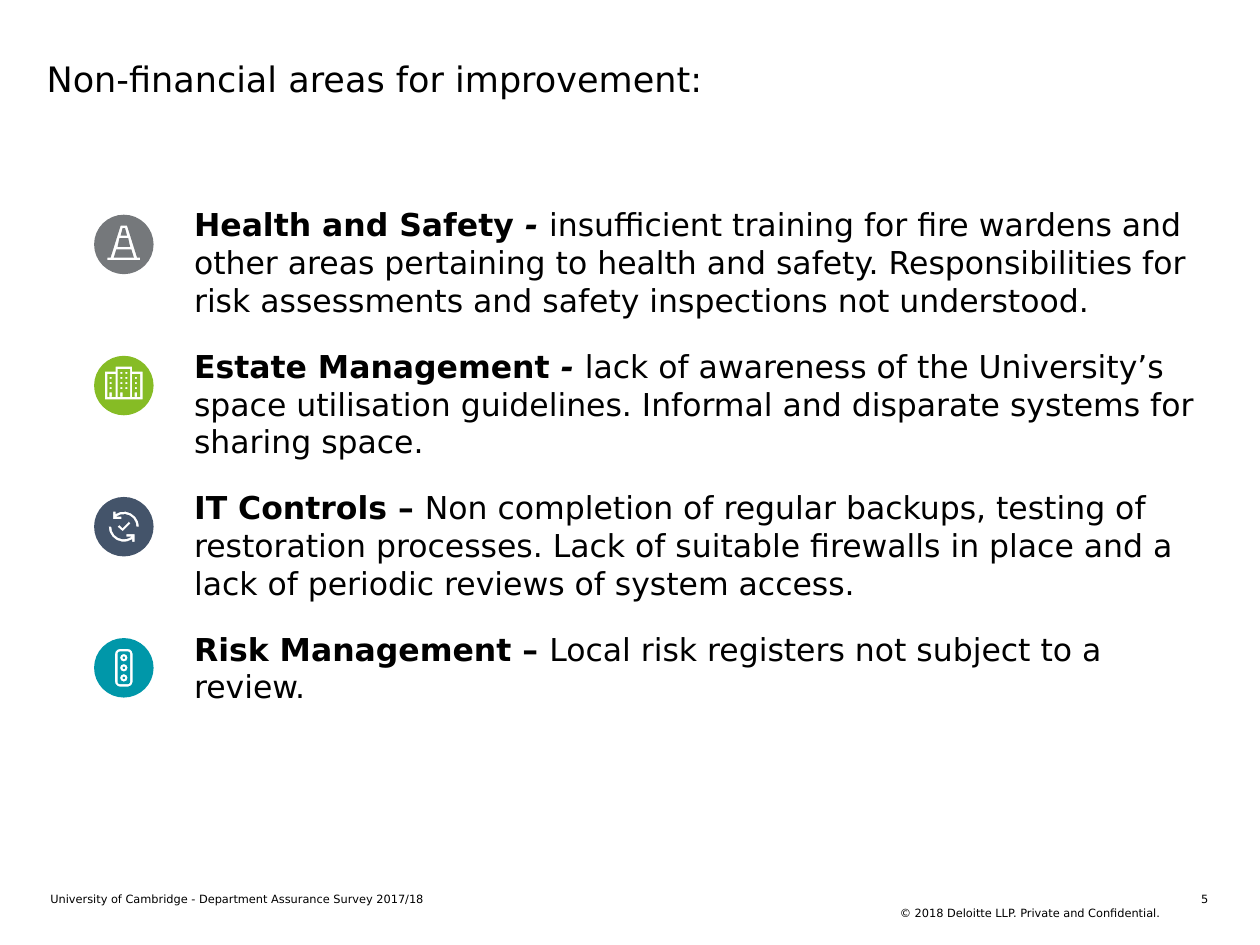
from math import cos, radians, sin

from pptx import Presentation
from pptx.dml.color import RGBColor as Color
from pptx.enum.text import MSO_ANCHOR as Anchor, PP_ALIGN as Align
from pptx.util import Inches, Pt

COLS, ROWS = 100, 75
CELL = Inches(10) // COLS
DOT = CELL // 10
FACE = "DejaVu Sans"
BLACK = Color(0x00, 0x00, 0x00)
GREY = Color(0x75, 0x78, 0x7B)
GREEN = Color(0x86, 0xBC, 0x25)
NAVY = Color(0x44, 0x54, 0x6A)
TEAL = Color(0x00, 0x97, 0xA9)

TOPICS = [
    ("Health and Safety ", "- ", "insufficient training for fire wardens and other areas pertaining to "
     "health and safety. Responsibilities for risk assessments and safety inspections not understood."),
    ("Estate Management ", "- ", "lack of awareness of the University’s space utilisation guidelines. "
     "Informal and disparate systems for sharing space."),
    ("IT Controls – ", "", "Non completion of regular backups, testing of restoration processes. "
     "Lack of suitable firewalls in place and a lack of periodic reviews of system access."),
    ("Risk Management – ", "", "Local risk registers not subject to a review."),
]


def arc(x, y, size, start, end, steps=6):
    turns = [radians(start + (end - start) * i / steps) for i in range(steps + 1)]
    return [(x + size * cos(t), y + size * sin(t)) for t in turns]


def ring(x, y, size, steps):
    return arc(x, y, size, 0, 360, steps)[:-1]


def box(left, top, right, bottom):
    return [(left, top), (right, top), (right, bottom), (left, bottom)]


def pill(wide, high, bend):
    x, y = wide - bend, high - bend
    spots = [(x, y), (-x, y), (-x, -y), (x, -y)]
    return [p for i, spot in enumerate(spots) for p in arc(*spot, bend, 90 * i, 90 * i + 90, 3)]


def cone():
    return [
        [(-13, 12.5), (-13, 10.5), (-10.5, 10.5), (-2.5, -15), (2.5, -15),
         (10.5, 10.5), (13, 10.5), (13, 12.5)],
        [(-1, -13), (1, -13), (2.5, -7), (-2.5, -7)],
        [(-3.5, -5), (3.5, -5), (5, 2), (-5, 2)],
        [(-6, 4), (6, 4), (8, 10.5), (-8, 10.5)],
    ]


def estate():
    walls = [(-15, -11), (-6.5, -11), (-6.5, -15), (6.5, -15),
             (6.5, -11), (15, -11), (15, 11), (-15, 11)]
    rooms = [box(-13, -9, -6.5, 9), box(-5, -13, 5, 9), box(6.5, -9, 13, 9)]
    doors = [box(x - 1, 5.5, x + 1, 9) for x in (-10.5, -2, 9.5)]
    spots = [(x, y) for x in (-10.5, -2, 2, 9.5) for y in (-6, -2, 2)]
    panes = [box(x - 0.8, y - 0.8, x + 0.8, y + 0.8) for x, y in [*spots, (-2, -10), (2, -10)]]
    return [walls, *rooms, *doors, *panes]


def sync():
    arrow = arc(0, 0, 12, 180, 57)
    arrow += [(6.5, 12), (8.5, 12), (8.5, 6), (2, 6), (2, 8), (5.5, 8)]
    arrow += arc(0, 0, 10, 55, 180)
    tick = [(-5, 0), (-3.6, -1.3), (-1, 1.2), (4, -4), (5.3, -2.6), (-1, 3.6)]
    return [arrow, [(-x, -y) for x, y in arrow], tick]


def light():
    lamps = [ring(0, y, size, 8) for y in (-8, 0, 8) for size in (3, 1)]
    return [pill(7, 15, 4), pill(5, 13, 2), *lamps]


def badge(slide, col, row, tint, parts):
    disc, *cuts = [[(round(col * CELL + x * DOT), round(row * CELL + y * DOT)) for x, y in part]
                   for part in [ring(0, 0, 23.6, 32), *parts]]
    pen = slide.shapes.build_freeform(*disc[0])
    pen.add_line_segments(disc[1:], close=True)
    for cut in cuts:
        pen.move_to(*cut[0])
        pen.add_line_segments(cut[1:], close=True)
    shape = pen.convert_to_shape()
    shape.shadow.inherit = False
    shape.fill.solid()
    shape.fill.fore_color.rgb = tint
    shape.line.fill.background()


def frame(slide, col, row, wide, high):
    text = slide.shapes.add_textbox(*(round(n * CELL) for n in (col, row, wide, high))).text_frame
    form = {"word_wrap": True, "vertical_anchor": Anchor.TOP, "margin_left": 0,
            "margin_right": 0, "margin_top": 0, "margin_bottom": 0}
    for key, value in form.items():
        setattr(text, key, value)
    return text


def write(para, words, size, **style):
    run = para.add_run()
    run.text = words
    run.font.color.rgb = BLACK
    for key, value in {"name": FACE, "size": Pt(size), **style}.items():
        setattr(run.font, key, value)


def label(slide, place, words, size, side=Align.LEFT):
    para = frame(slide, *place).paragraphs[0]
    para.alignment = side
    write(para, words, size)


def topics(slide):
    text = frame(slide, 15.4, 16.3, 79.8, 46)
    for i, (head, dash, rest) in enumerate(TOPICS):
        para = text.add_paragraph() if i else text.paragraphs[0]
        para.space_before = Pt(6 if i else 0)
        para.space_after = Pt(10)
        write(para, head, 18, bold=True)
        if dash:
            write(para, dash, 18, bold=True, italic=True)
        write(para, rest, 18)


def main():
    deck = Presentation()
    deck.slide_width, deck.slide_height = COLS * CELL, ROWS * CELL
    slide = deck.slides.add_slide(deck.slide_layouts[6])
    label(slide, (3.7, 4.6, 91.6, 7.6), "Non-financial areas for improvement:", 20)
    topics(slide)
    badges = [(GREY, cone), (GREEN, estate), (NAVY, sync), (TEAL, light)]
    for i, (tint, draw) in enumerate(badges):
        badge(slide, 9.83, 19.4 + 11.2 * i, tint, draw())
    label(slide, (4, 70.8, 41.1, 2.7), "University of Cambridge - Department Assurance Survey 2017/18", 6.5)
    label(slide, (51, 71.9, 41.1, 1.6), "© 2018 Deloitte LLP. Private and Confidential.", 6.5, Align.RIGHT)
    label(slide, (93.4, 70.8, 2.5, 1.1), "5", 6.5, Align.RIGHT)
    deck.save("out.pptx")


if __name__ == "__main__":
    main()
